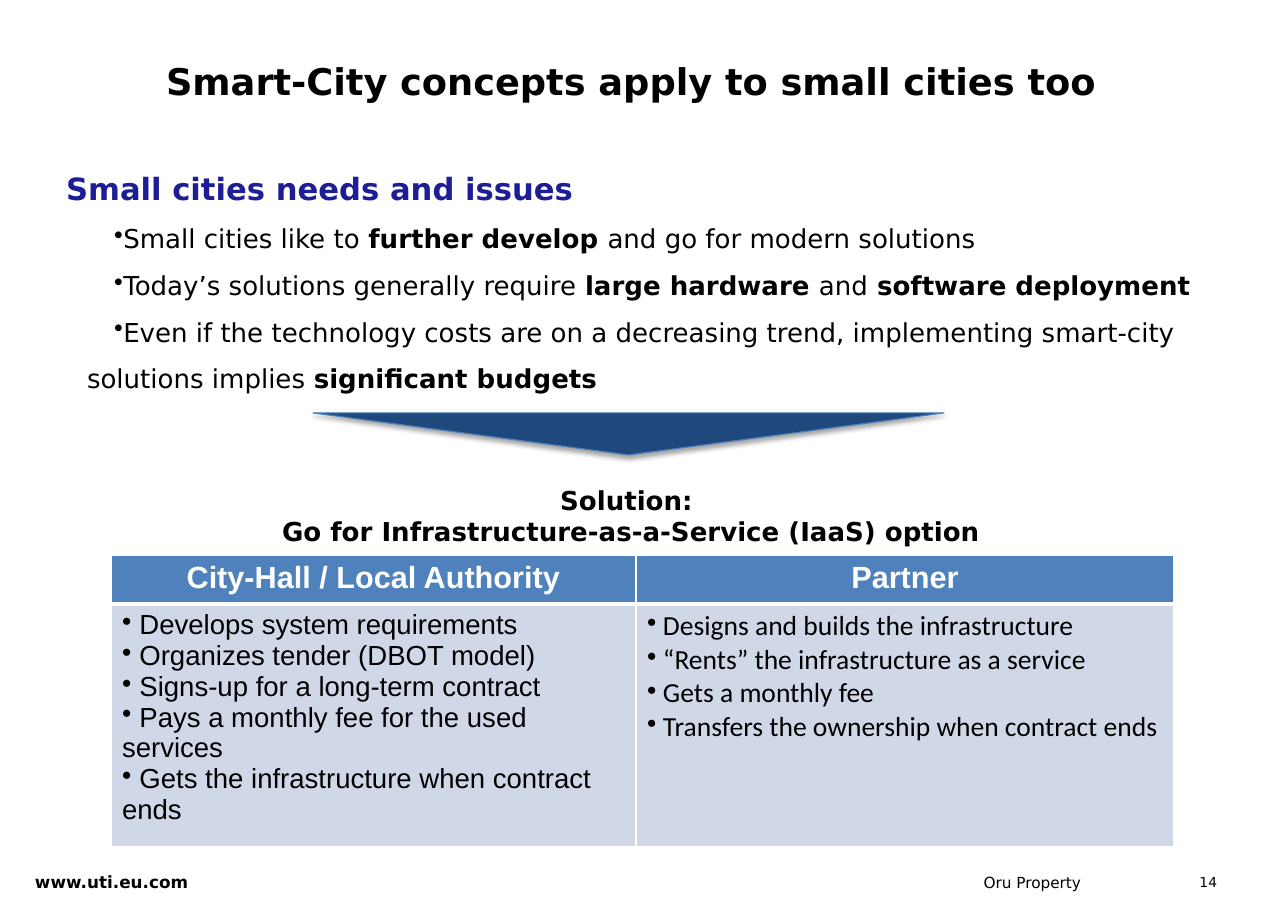
from dataclasses import dataclass

from lxml import etree
from pptx import Presentation
from pptx.dml.color import RGBColor
from pptx.enum.shapes import MSO_SHAPE
from pptx.enum.text import MSO_ANCHOR, PP_ALIGN
from pptx.oxml.ns import qn
from pptx.util import Pt

LEFT, CENTER, RIGHT = PP_ALIGN.LEFT, PP_ALIGN.CENTER, PP_ALIGN.RIGHT
TOP = MSO_ANCHOR.TOP
TRIANGLE = MSO_SHAPE.ISOSCELES_TRIANGLE
EMU_PER_PX = 8298
EMU_PER_PT = 12700


@dataclass(frozen=True)
class Theme:
    text_font: str = "DejaVu Sans"
    table_font: str = "Arial"
    partner_font: str = "Calibri"
    black: str = "000000"
    white: str = "FFFFFF"
    heading: str = "1D1D96"
    arrow: str = "1F497D"
    arrow_line: str = "4B7EBC"
    header_fill: str = "4F81BD"
    body_fill: str = "D0D8E8"
    title_size: int = 24
    heading_size: int = 20
    text_size: int = 17
    cell_size: int = 18
    site_size: int = 11
    owner_size: int = 10
    number_size: int = 9


THEME = Theme()

NEEDS = [
    [("Small cities like to ", False), ("further develop ", True),
     ("and go for modern solutions", False)],
    [("Today’s solutions generally require ", False), ("large hardware ", True),
     ("and", False), (" software deployment", True)],
    [("Even if the technology costs are on a decreasing trend, implementing "
      "smart-city solutions implies ", False), ("significant budgets", True)],
]
ROLES = [
    ("City-Hall / Local Authority", THEME.table_font, [
        " Develops system requirements",
        " Organizes tender (DBOT model)",
        " Signs-up for a long-term contract",
        " Pays a monthly fee for the used services",
        " Gets the infrastructure when contract ends"]),
    ("Partner", THEME.partner_font, [
        " Designs and builds the infrastructure",
        " “Rents” the infrastructure as a service",
        " Gets a monthly fee",
        " Transfers the ownership when contract ends"]),
]


def px(length):
    return length * EMU_PER_PX


def rgb(color):
    return RGBColor.from_string(color)


def add_color(parent, color):
    """Append a solid RGB colour element and return it."""
    return etree.SubElement(parent, qn("a:srgbClr"), val=color)


def add_run(paragraph, text, size, bold=False, color=THEME.black, font=THEME.text_font):
    run = paragraph.add_run()
    run.text = text
    run.font.size = Pt(size)
    run.font.bold = bold
    run.font.name = font
    run.font.color.rgb = rgb(color)


def add_bullet(paragraph, margin=0, indent=0):
    properties = paragraph._p.get_or_add_pPr()
    properties.set("marL", str(px(margin)))
    properties.set("indent", str(px(indent)))
    etree.SubElement(properties, qn("a:buChar"), char="•")


def next_paragraph(frame, index):
    """Use the paragraph a frame starts with, then add more."""
    return frame.add_paragraph() if index else frame.paragraphs[0]


def add_text(slide, box, lines, size, bold=False, color=THEME.black, align=LEFT,
             insets=(11, 6)):
    frame = slide.shapes.add_textbox(*map(px, box)).text_frame
    frame.word_wrap = True
    frame.vertical_anchor = TOP
    frame.margin_left = frame.margin_right = px(insets[0])
    frame.margin_top = frame.margin_bottom = px(insets[1])
    for index, line in enumerate(lines):
        paragraph = next_paragraph(frame, index)
        paragraph.alignment = align
        add_run(paragraph, line, size, bold, color)
    return frame


def add_needs(slide):
    frame = add_text(slide, (55, 164, 1233, 237), ["Small cities needs and issues"],
                     THEME.heading_size, True, THEME.heading)
    for need in NEEDS:
        paragraph = frame.add_paragraph()
        paragraph.level = 1
        add_bullet(paragraph, 21, 27)
        paragraph.line_spacing = 1.5
        for text, bold in need:
            add_run(paragraph, text, THEME.text_size, bold)


def add_down_arrow(slide):
    arrow = slide.shapes.add_shape(TRIANGLE, *map(px, (313, 413, 631, 42)))
    arrow.fill.solid()
    arrow.fill.fore_color.rgb = rgb(THEME.arrow)
    arrow.line.color.rgb = rgb(THEME.arrow_line)
    arrow.line.width = Pt(0.75)
    arrow.shadow.inherit = False
    properties = arrow._element.spPr
    properties.find(qn("a:xfrm")).set("flipV", "1")
    shadow = etree.SubElement(
        properties.find(qn("a:effectLst")), qn("a:outerShdw"),
        blurRad="40000", dist="23000", dir="5400000", rotWithShape="0")
    etree.SubElement(add_color(shadow, THEME.black), qn("a:alpha"), val="35000")


def style_cell(cell, fill, bottom_width):
    """Give a cell white borders and a plain fill."""
    properties = cell._tc.get_or_add_tcPr()
    widths = {"a:lnL": 1, "a:lnR": 1, "a:lnT": 1, "a:lnB": bottom_width}
    for side, width in widths.items():
        border = etree.SubElement(properties, qn(side), w=str(width * EMU_PER_PT))
        add_color(etree.SubElement(border, qn("a:solidFill")), THEME.white)
    cell.fill.solid()
    cell.fill.fore_color.rgb = rgb(fill)


def add_roles_table(slide):
    widths, heights = (525, 538), (49, 242)
    table = slide.shapes.add_table(
        2, 2, px(111), px(555), px(sum(widths)), px(sum(heights))).table
    table.horz_banding = False
    for row, height in zip(table.rows, heights):
        row.height = px(height)
    for index, (role, font, duties) in enumerate(ROLES):
        table.columns[index].width = px(widths[index])
        header, body = table.cell(0, index), table.cell(1, index)
        style_cell(header, THEME.header_fill, 3)
        style_cell(body, THEME.body_fill, 1)
        heading = header.text_frame.paragraphs[0]
        heading.alignment = CENTER
        add_run(heading, role, THEME.heading_size, True, THEME.white, THEME.table_font)
        for position, duty in enumerate(duties):
            paragraph = next_paragraph(body.text_frame, position)
            add_bullet(paragraph)
            add_run(paragraph, duty, THEME.cell_size, font=font)


def add_footer(slide):
    add_text(slide, (24, 866, 293, 32), ["www.uti.eu.com"], THEME.site_size, True)
    add_text(slide, (829, 867, 263, 30), ["Oru Property"], THEME.owner_size, align=RIGHT)
    add_text(slide, (1169, 868, 60, 29), ["14"], THEME.number_size, align=RIGHT,
             insets=(12, 6))


def main():
    presentation = Presentation()
    presentation.slide_width, presentation.slide_height = px(1288), px(911)
    slide = presentation.slides.add_slide(presentation.slide_layouts[6])
    add_footer(slide)
    add_text(slide, (154, 53, 1096, 76), ["Smart-City concepts apply to small cities too"],
             THEME.title_size, True, insets=(12, 6))
    add_needs(slide)
    add_down_arrow(slide)
    add_text(slide, (83, 478, 1096, 106),
             ["Solution: ", "Go for Infrastructure-as-a-Service (IaaS) option"],
             THEME.text_size, True, align=CENTER)
    add_roles_table(slide)
    presentation.save("out.pptx")


if __name__ == "__main__":
    main()
